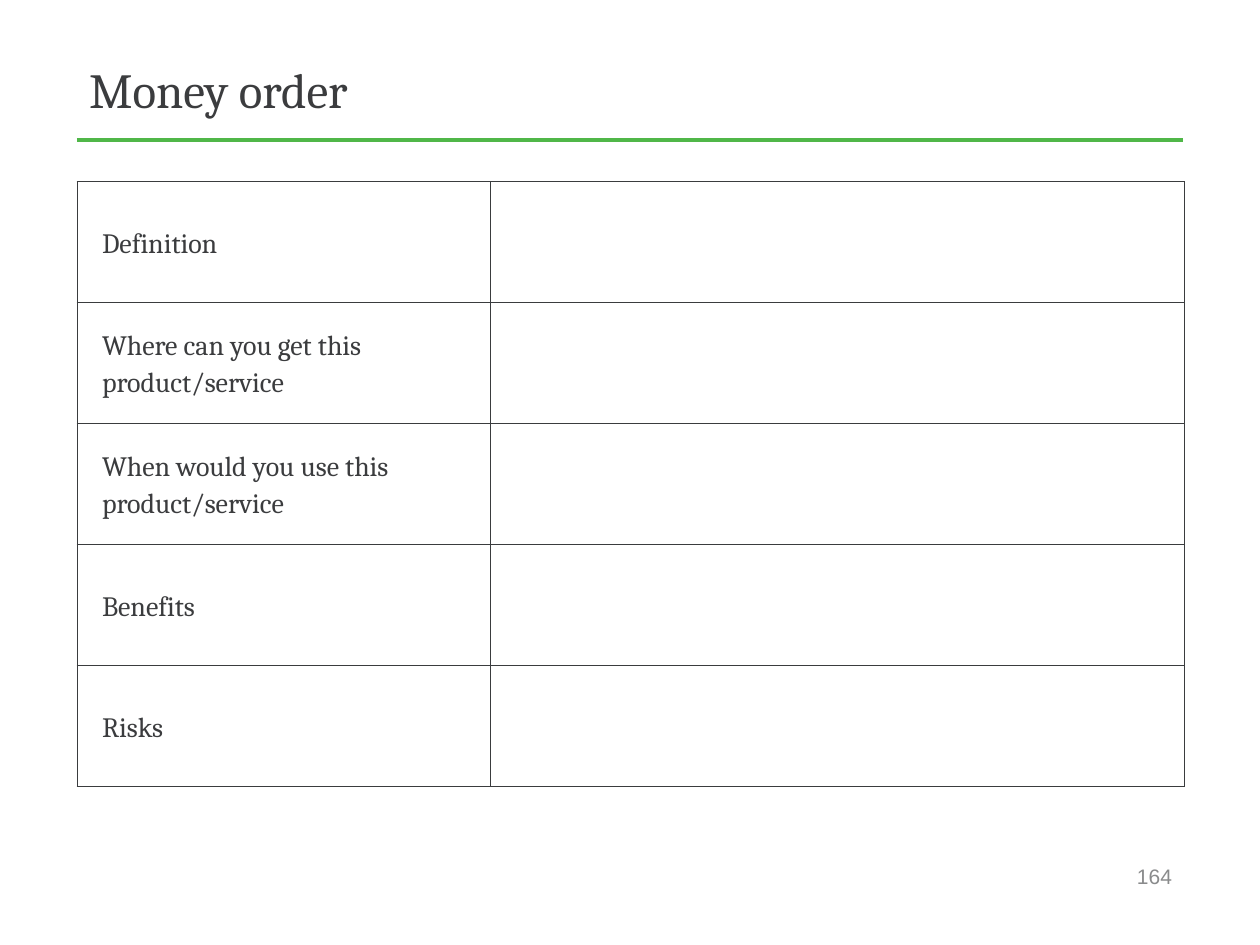
from lxml import etree
from pptx import Presentation
from pptx.dml.color import RGBColor
from pptx.enum.shapes import MSO_CONNECTOR
from pptx.enum.text import MSO_ANCHOR, PP_ALIGN
from pptx.oxml.ns import qn
from pptx.util import Inches, Pt

LEFT, RIGHT = 0.61, 9.39
INK, GREEN, GRAY, RULE = "3B3C3E", "50B748", "8A8B8C", "3A3C3E"
TITLE = {"name": "Cambria", "size": Pt(28)}
LABEL = {"name": "Cambria", "size": Pt(16)}
NUMBER = {"name": "Arial", "size": Pt(12)}
INSETS = {"margin_left": Inches(0.2), "margin_right": Inches(0.1),
          "margin_top": Inches(0.05), "margin_bottom": Inches(0.05)}
COLS = (3.28, 5.51)
ROW = 0.96
ITEMS = (
    "Definition",
    "Where can you get this product/service",
    "When would you use this product/service",
    "Benefits",
    "Risks",
)


def color(code):
    return RGBColor.from_string(code)


def apply(obj, props):
    for name, value in props.items():
        setattr(obj, name, value)


def write(par, text, style, code):
    run = par.add_run()
    run.text = text
    apply(run.font, style)
    run.font.color.rgb = color(code)


def add_text(slide, box, text, style, code, align=PP_ALIGN.LEFT):
    frame = slide.shapes.add_textbox(*map(Inches, box)).text_frame
    apply(frame, {"word_wrap": True, "vertical_anchor": MSO_ANCHOR.MIDDLE})
    par = frame.paragraphs[0]
    par.alignment = align
    write(par, text, style, code)


def add_rule(slide, top):
    line = slide.shapes.add_connector(
        MSO_CONNECTOR.STRAIGHT, *map(Inches, (LEFT, top, RIGHT, top)))
    line.line.color.rgb = color(GREEN)
    line.line.width = Pt(2)
    etree.SubElement(line._element.spPr, qn("a:effectLst"))


def add_border(cell, code, width):
    """Draw all four edges; they must precede the fill in the cell XML."""
    props = cell._tc.get_or_add_tcPr()
    for spot, side in enumerate(("lnL", "lnR", "lnT", "lnB")):
        edge = etree.Element(qn(f"a:{side}"), w=str(Pt(width)))
        fill = etree.SubElement(edge, qn("a:solidFill"))
        etree.SubElement(fill, qn("a:srgbClr"), val=code)
        props.insert(spot, edge)


def add_grid(slide, top):
    rows = len(ITEMS)
    box = (LEFT, top, sum(COLS), ROW * rows)
    table = slide.shapes.add_table(
        rows, len(COLS), *map(Inches, box)).table
    apply(table, {"first_row": False, "horz_banding": False})
    for col, width in zip(table.columns, COLS):
        col.width = Inches(width)
    for row in table.rows:
        row.height = Inches(ROW)
    for cell in table.iter_cells():
        cell.fill.background()
        add_border(cell, RULE, 0.25)
    for index, text in enumerate(ITEMS):
        cell = table.cell(index, 0)
        apply(cell, {**INSETS, "vertical_anchor": MSO_ANCHOR.MIDDLE})
        par = cell.text_frame.paragraphs[0]
        par.line_spacing = 1.15
        write(par, text, LABEL, INK)


def main():
    deck = Presentation()
    apply(deck, {"slide_width": Inches(10), "slide_height": Inches(7.5)})
    slide = deck.slides.add_slide(deck.slide_layouts[6])
    add_rule(slide, 1.11)
    add_text(slide, (LEFT, 0.3, 8.79, 0.81), "Money order", TITLE, INK)
    add_text(slide, (6.23, 6.75, 3.17, 0.4), "164", NUMBER, GRAY,
             PP_ALIGN.RIGHT)
    add_grid(slide, 1.44)
    deck.save("out.pptx")


if __name__ == "__main__":
    main()
